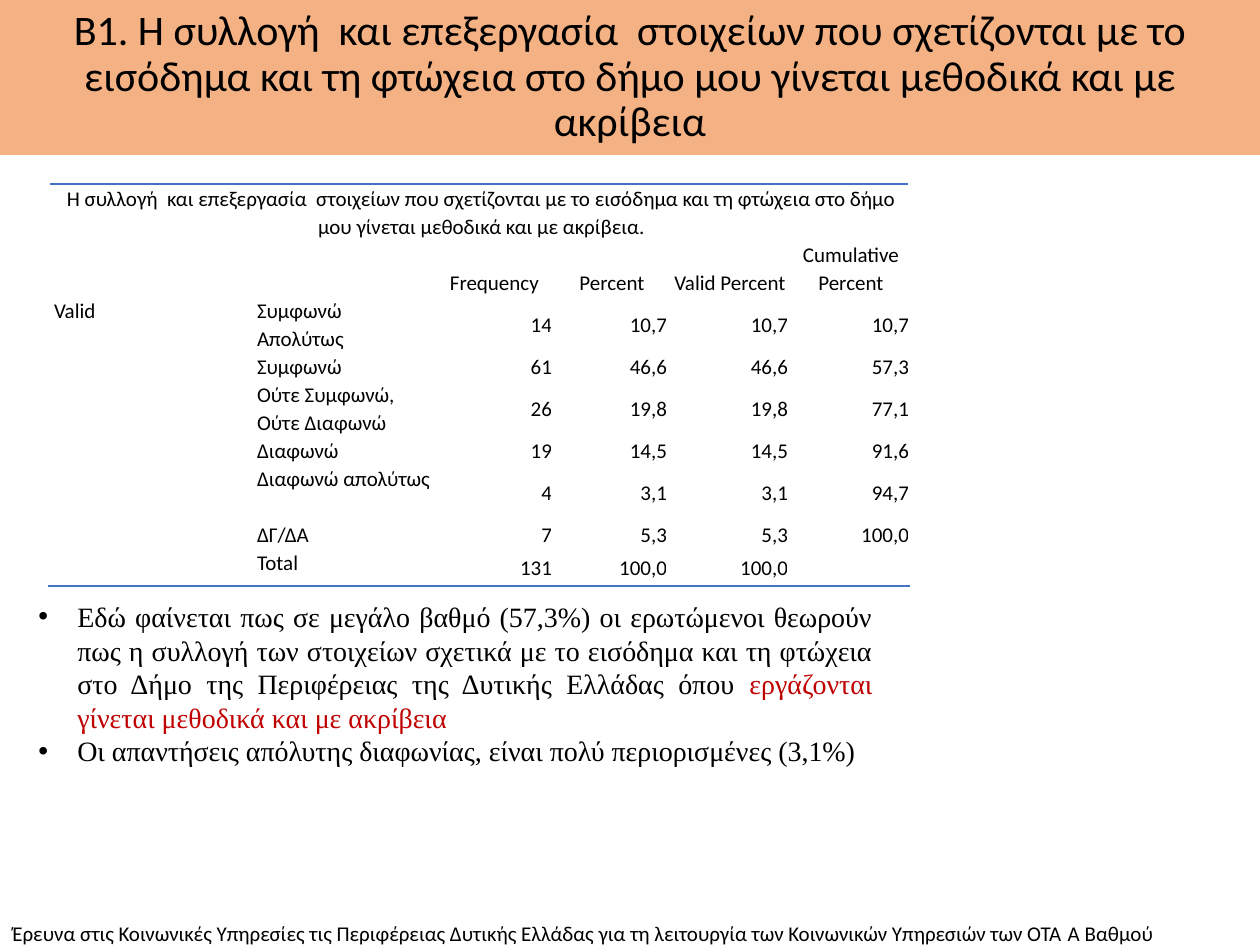
from lxml import etree
from pptx import Presentation
from pptx.dml.color import RGBColor
from pptx.enum.shapes import MSO_SHAPE
from pptx.enum.text import MSO_ANCHOR, MSO_AUTO_SIZE, PP_ALIGN
from pptx.oxml.ns import qn
from pptx.util import Pt

PX = 914400 // 126
LEFT, CENTER, RIGHT, JUSTIFY = PP_ALIGN.LEFT, PP_ALIGN.CENTER, PP_ALIGN.RIGHT, PP_ALIGN.JUSTIFY
TOP, MIDDLE, BOTTOM = MSO_ANCHOR.TOP, MSO_ANCHOR.MIDDLE, MSO_ANCHOR.BOTTOM
FIT_TEXT = MSO_AUTO_SIZE.SHAPE_TO_FIT_TEXT
RECTANGLE = MSO_SHAPE.RECTANGLE
BLACK = RGBColor(0x00, 0x00, 0x00)
RED = RGBColor(0xC0, 0x00, 0x00)
ORANGE = RGBColor(0xF4, 0xB1, 0x83)
BLUE = RGBColor(0x44, 0x72, 0xC4)


def write(para, text, size=12, font="Calibri", color=BLACK, align=LEFT,
          spacing=None, after=None, margin=0, indent=0, bullet=None):
    """Append a run to the paragraph and set the paragraph's format."""
    props = para._p.get_or_add_pPr()
    props.set("marL", str(margin * PX))
    props.set("indent", str(indent * PX))
    if bullet and props.find(qn("a:buChar")) is None:
        etree.SubElement(props, qn("a:buFont"), typeface="Arial")
        etree.SubElement(props, qn("a:buChar"), char=bullet)
    para.alignment = align
    para.line_spacing = spacing
    para.space_after = after
    if text:
        span = para.add_run()
        span.text = text
        span.font.size = Pt(size)
        span.font.name = font
        span.font.color.rgb = color


def add_border(cell, side):
    line = etree.Element(qn("a:" + side), w=str(Pt(1)))
    fill = etree.SubElement(line, qn("a:solidFill"))
    etree.SubElement(fill, qn("a:srgbClr"), val=str(BLUE))
    cell._tc.get_or_add_tcPr().insert(0, line)


deck = Presentation()
deck.slide_width, deck.slide_height = 1260 * PX, 945 * PX
page = deck.slides.add_slide(deck.slide_layouts[6])

# Title band
title = page.shapes.add_shape(RECTANGLE, 0, 0, 1260 * PX, 155 * PX)
title.shadow.inherit = False
title.fill.solid()
title.fill.fore_color.rgb = ORANGE
title.line.fill.background()
title.text_frame.vertical_anchor = MIDDLE
write(title.text_frame.paragraphs[0],
      "Β1. Η συλλογή  και επεξεργασία  στοιχείων που σχετίζονται με το εισόδημα "
      "και τη φτώχεια στο δήμο μου γίνεται μεθοδικά και με ακρίβεια",
      size=24, align=CENTER, spacing=0.9)

# Footer
footer = page.shapes.add_textbox(0, 914 * PX, 1239 * PX, 38 * PX)
footer.text_frame.word_wrap = True
footer.text_frame.auto_size = FIT_TEXT
write(footer.text_frame.paragraphs[0],
      "Έρευνα στις Κοινωνικές Υπηρεσίες τις Περιφέρειας Δυτικής Ελλάδας για τη "
      "λειτουργία των Κοινωνικών Υπηρεσιών των ΟΤΑ Ά Βαθμού")

# Frequency table
LINE_HEIGHT = 28
COLUMN_WIDTHS = [203, 180, 120, 115, 121, 121]
ROW_LINES = [2, 2, 2, 1, 2, 1, 2, 1, 1]
ROWS = [
    ["Η συλλογή  και επεξεργασία  στοιχείων που σχετίζονται με το εισόδημα και τη "
     "φτώχεια στο δήμο μου γίνεται μεθοδικά και με ακρίβεια.", "", "", "", "", ""],
    ["", "", "Frequency", "Percent", "Valid Percent", "Cumulative Percent"],
    ["Valid", "Συμφωνώ Απολύτως", "14", "10,7", "10,7", "10,7"],
    ["", "Συμφωνώ", "61", "46,6", "46,6", "57,3"],
    ["", "Ούτε Συμφωνώ, Ούτε Διαφωνώ", "26", "19,8", "19,8", "77,1"],
    ["", "Διαφωνώ", "19", "14,5", "14,5", "91,6"],
    ["", "Διαφωνώ απολύτως", "4", "3,1", "3,1", "94,7"],
    ["", "ΔΓ/ΔΑ", "7", "5,3", "5,3", "100,0"],
    ["", "Total", "131", "100,0", "100,0", ""],
]
table = page.shapes.add_table(len(ROWS), len(COLUMN_WIDTHS), 49 * PX, 184 * PX,
                              sum(COLUMN_WIDTHS) * PX,
                              sum(ROW_LINES) * LINE_HEIGHT * PX).table
table.first_row = table.horz_banding = False
for column, width in zip(table.columns, COLUMN_WIDTHS):
    column.width = width * PX
for row, lines in zip(table.rows, ROW_LINES):
    row.height = lines * LINE_HEIGHT * PX

last_row = len(ROWS) - 1
table.cell(0, 0).merge(table.cell(0, 5))
table.cell(1, 0).merge(table.cell(1, 1))
table.cell(2, 0).merge(table.cell(last_row, 0))

for r, texts in enumerate(ROWS):
    for c, text in enumerate(texts):
        cell = table.cell(r, c)
        cell.fill.background()
        cell.margin_left = cell.margin_right = cell.margin_top = cell.margin_bottom = 0
        if r == 0:
            anchor, align = MIDDLE, CENTER
        elif r == 1:
            anchor, align = BOTTOM, CENTER
        elif c < 2:
            anchor, align = TOP, LEFT
        else:
            anchor, align = MIDDLE, RIGHT
        cell.vertical_anchor = anchor
        write(cell.text_frame.paragraphs[0], text, align=align,
              spacing=Pt(16), after=Pt(8), margin=5)
        if r == 0:
            add_border(cell, "lnT")
        if r == last_row or (r, c) == (2, 0):
            add_border(cell, "lnB")

# Findings
FINDINGS = [
    [("Εδώ φαίνεται πως σε μεγάλο βαθμό (57,3%) οι ερωτώμενοι θεωρούν πως η συλλογή "
      "των στοιχείων σχετικά με το εισόδημα και τη φτώχεια στο Δήμο της Περιφέρειας "
      "της Δυτικής Ελλάδας όπου ", BLACK),
     ("εργάζονται γίνεται μεθοδικά και με ακρίβεια", RED)],
    [("Οι απαντήσεις απόλυτης διαφωνίας, είναι πολύ περιορισμένες (3,1%)", BLACK)],
]
findings = page.shapes.add_textbox(26 * PX, 592 * PX, 859 * PX, 183 * PX).text_frame
findings.word_wrap = True
findings.auto_size = FIT_TEXT
findings.vertical_anchor = MIDDLE
for i, spans in enumerate(FINDINGS):
    para = findings.add_paragraph() if i else findings.paragraphs[0]
    for text, color in spans:
        write(para, text, size=16, font="Times New Roman", color=color,
              align=JUSTIFY, margin=39, indent=-39, bullet="•")

deck.save("out.pptx")
